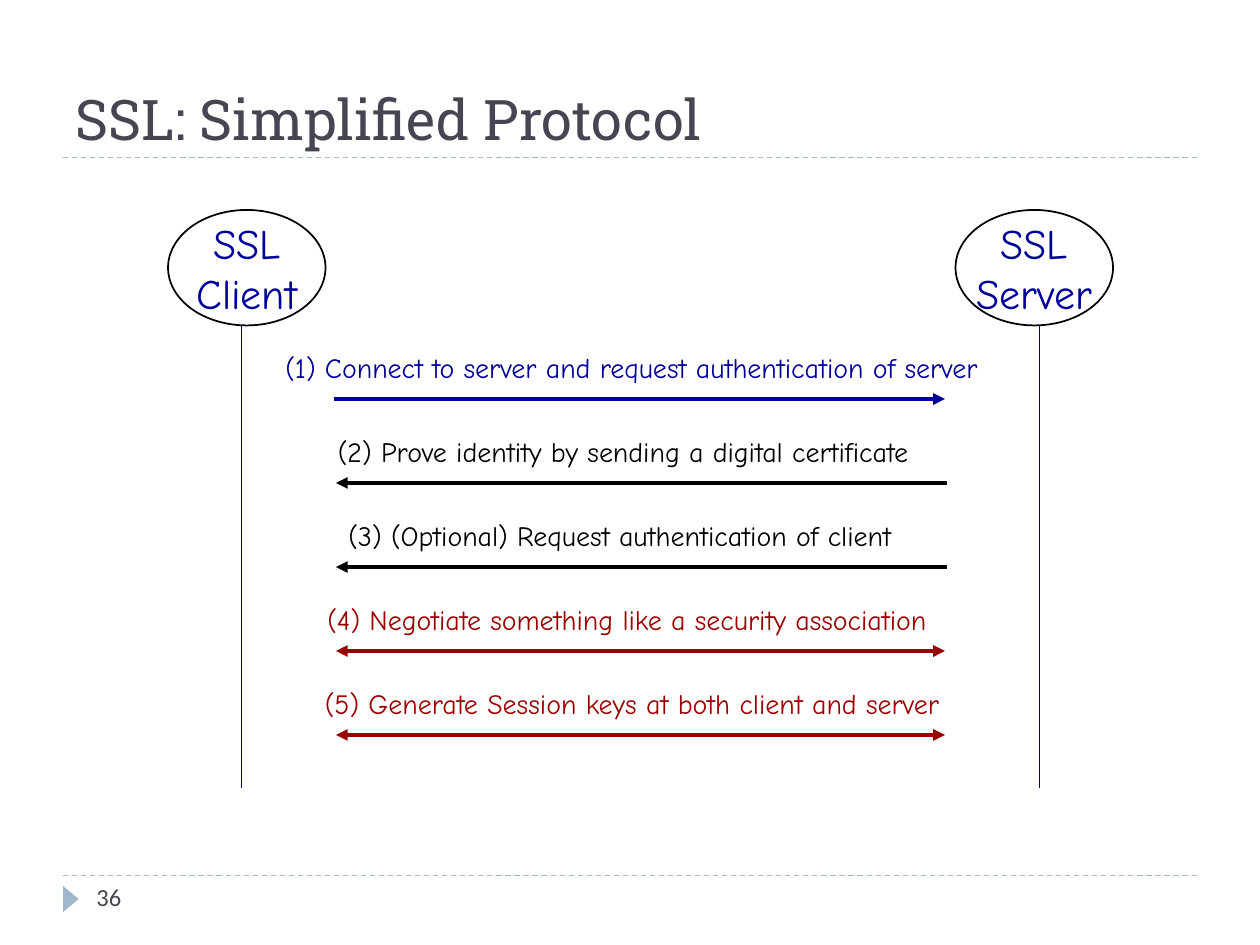
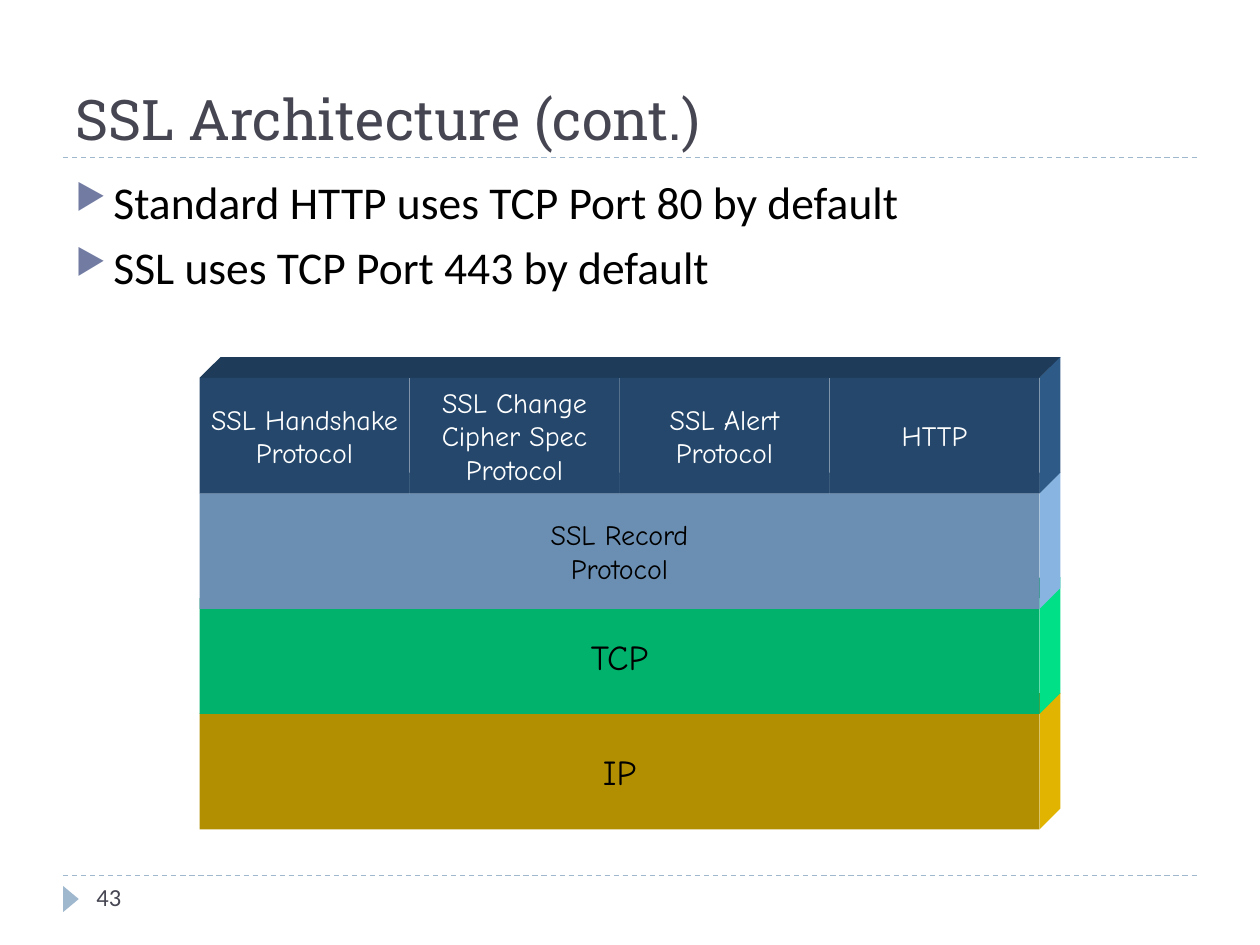
import pptx
import pptx.util
from pptx.dml.color import RGBColor
from pptx.enum.dml import MSO_LINE
from pptx.enum.shapes import MSO_CONNECTOR, MSO_SHAPE
from pptx.enum.text import MSO_ANCHOR, MSO_AUTO_SIZE, PP_ALIGN
from pptx.oxml.ns import qn
from lxml import etree

EMU_PER_PX = 9525
COLORS = {
    "white": "FFFFFF", "black": "000000", "title": "464653", "rule": "9FB8CD",
    "bullet": "727CA3", "blue": "000099", "navy": "000066", "red": "9A0000",
    "ip": "FFCC00", "tcp": "00FF99", "record": "99CCFF", "ssl": "336699",
}
TITLE_FONT, BODY_FONT, DIAGRAM_FONT = "Roboto Slab", "Calibri", "Comic Neue"
BULLET_FONT = "OpenSymbol"
DEPTH = 16
FRONT_LIGHT, SIDE_LIGHT, TOP_LIGHT = 0.7, 0.88, 0.59


def px(n):
    return pptx.util.Emu(n * EMU_PER_PX)


def rgb(name, light=1):
    """Colour by name, darkened when light is below 1."""
    value = COLORS[name]
    return RGBColor(*(round(int(value[i:i + 2], 16) * light) for i in (0, 2, 4)))


def write(tf, text, size, font, color, align=None):
    tf.text = text
    for p in tf.paragraphs:
        p.alignment = align
        for r in p.runs:
            r.font.size = pptx.util.Pt(size)
            r.font.name = font
            r.font.color.rgb = rgb(color)


def add_text(s, box, text, size, font, color, wrap=True, anchor=MSO_ANCHOR.TOP):
    tf = s.shapes.add_textbox(*map(px, box)).text_frame
    tf.word_wrap = wrap
    tf.vertical_anchor = anchor
    write(tf, text, size, font, color)
    return tf


def paint(sp, color, light=1, outline=None):
    sp.shadow.inherit = False
    sp.fill.solid()
    sp.fill.fore_color.rgb = rgb(color, light)
    if outline:
        sp.line.color.rgb = rgb(outline)
        sp.line.width = pptx.util.Pt(1)
    else:
        sp.line.fill.background()


def add_shape(s, kind, box, color, light=1, outline=None):
    sp = s.shapes.add_shape(kind, *map(px, box))
    paint(sp, color, light, outline)
    return sp


def add_centred(sp, text, size, color):
    tf = sp.text_frame
    tf.word_wrap = False
    tf.vertical_anchor = MSO_ANCHOR.MIDDLE
    write(tf, text, size, DIAGRAM_FONT, color, PP_ALIGN.CENTER)


def add_line(s, x1, y1, x2, y2, color, width=0.75, dash=None, ends=()):
    """Straight line; ends may hold headEnd (start) and tailEnd (finish)."""
    c = s.shapes.add_connector(MSO_CONNECTOR.STRAIGHT, *map(px, (x1, y1, x2, y2)))
    c.line.color.rgb = rgb(color)
    c.line.width = pptx.util.Pt(width)
    if dash:
        c.line.dash_style = dash
    sppr = c.element.spPr
    ln = sppr.find(qn("a:ln"))
    if ends:
        ln.set("cap", "sq")
    for end in ends:
        etree.SubElement(ln, qn("a:" + end), type="triangle")
    etree.SubElement(sppr, qn("a:effectLst"))


def add_bullets(s, box, lines):
    tf = add_text(s, box, "\n".join(lines), 26, BODY_FONT, "black")
    for p in tf.paragraphs:
        p.space_before = pptx.util.Pt(6)
        ppr = p._p.get_or_add_pPr()
        ppr.set("marL", str(px(29)))
        ppr.set("indent", str(px(-29)))
        clr = etree.SubElement(ppr, qn("a:buClr"))
        etree.SubElement(clr, qn("a:srgbClr"), val=COLORS["bullet"])
        etree.SubElement(ppr, qn("a:buSzPct"), val="76000")
        etree.SubElement(ppr, qn("a:buFont"), typeface=BULLET_FONT)
        etree.SubElement(ppr, qn("a:buChar"), char="▶")


def add_face(s, points, color, light):
    (x, y), *rest = [(px(a), px(b)) for a, b in points]
    builder = s.shapes.build_freeform(x, y, scale=1.0)
    builder.add_line_segments(rest, close=True)
    paint(builder.convert_to_shape(), color, light)


def add_layer(s, x, y, w, h, color, labels, size, text_color="black"):
    """Solid layer receding up and right, its front split evenly among the labels."""
    right, bottom = x + w, y + h
    back_right, back_top = right + DEPTH, y - DEPTH
    add_face(s, [(x, y), (x + DEPTH, back_top), (back_right, back_top), (right, y)],
             color, TOP_LIGHT)
    add_face(s, [(right, y), (back_right, back_top),
                 (back_right, bottom - DEPTH), (right, bottom)], color, SIDE_LIGHT)
    cell = w // len(labels)
    for i, text in enumerate(labels):
        front = add_shape(s, MSO_SHAPE.RECTANGLE, (x + cell * i, y, cell, h),
                          color, FRONT_LIGHT)
        add_centred(front, text, size, text_color)


def new_slide(prs, title, number):
    s = prs.slides.add_slide(prs.slide_layouts[6])
    for y in (667, 120):
        add_line(s, 48, y, 912, y, "rule", dash=MSO_LINE.DASH)
    marker = add_shape(s, MSO_SHAPE.ISOSCELES_TRIANGLE, (44, 679, 20, 12), "rule")
    marker.rotation = 90
    add_text(s, (48, 16, 864, 104), title, 32, TITLE_FONT, "title",
             anchor=MSO_ANCHOR.BOTTOM)
    add_text(s, (64, 667, 208, 38), str(number), 14, BODY_FONT, "title")
    return s


def build_protocol(prs):
    s = new_slide(prs, "SSL: Simplified Protocol", 36)
    for x, party in ((128, "Client"), (728, "Server")):
        sp = add_shape(s, MSO_SHAPE.OVAL, (x, 160, 120, 88), "white", outline="black")
        add_centred(sp, "SSL\n" + party, 24, "blue")

    to_client, to_server = ("headEnd",), ("tailEnd",)
    both = to_client + to_server
    messages = [
        (208, 602, "(1) Connect to server and request authentication of server",
         "blue", to_server),
        (248, 507, "(2) Prove identity by sending a digital certificate",
         "black", to_client),
        (256, 480, "(3) (Optional) Request authentication of client",
         "black", to_client),
        (240, 523, "(4) Negotiate something like a security association",
         "red", both),
        (238, 534, "(5) Generate Session keys at both client and server",
         "red", both),
    ]
    for i, (x, w, text, color, ends) in enumerate(messages):
        y = 304 + 64 * i
        add_line(s, 256, y, 720, y, color, 2.25, ends=ends)
        tf = add_text(s, (x, y - 42, w, 36), text, 16, DIAGRAM_FONT, color, wrap=False)
        tf.auto_size = MSO_AUTO_SIZE.SHAPE_TO_FIT_TEXT

    for x in (184, 792):
        add_line(s, x, 248, x, 600, "navy")


def build_architecture(prs):
    s = new_slide(prs, "SSL Architecture (cont.)", 43)
    add_bullets(s, (48, 128, 864, 518), [
        "Standard HTTP uses TCP Port 80 by default",
        "SSL uses TCP Port 443 by default",
    ])
    protocols = ["SSL Handshake\nProtocol", "SSL Change\nCipher Spec\nProtocol",
                 "SSL Alert\nProtocol", "HTTP"]
    layers = [
        (544, "ip", ["IP"], 20, "black"),
        (456, "tcp", ["TCP"], 20, "black"),
        (376, "record", ["SSL Record\nProtocol"], 16, "black"),
        (288, "ssl", protocols, 16, "white"),
    ]
    for y, *look in layers:
        add_layer(s, 152, y, 640, 88, *look)


def main():
    prs = pptx.Presentation()
    prs.slide_width, prs.slide_height = px(960), px(720)
    build_protocol(prs)
    build_architecture(prs)
    prs.save("out.pptx")


if __name__ == "__main__":
    main()
